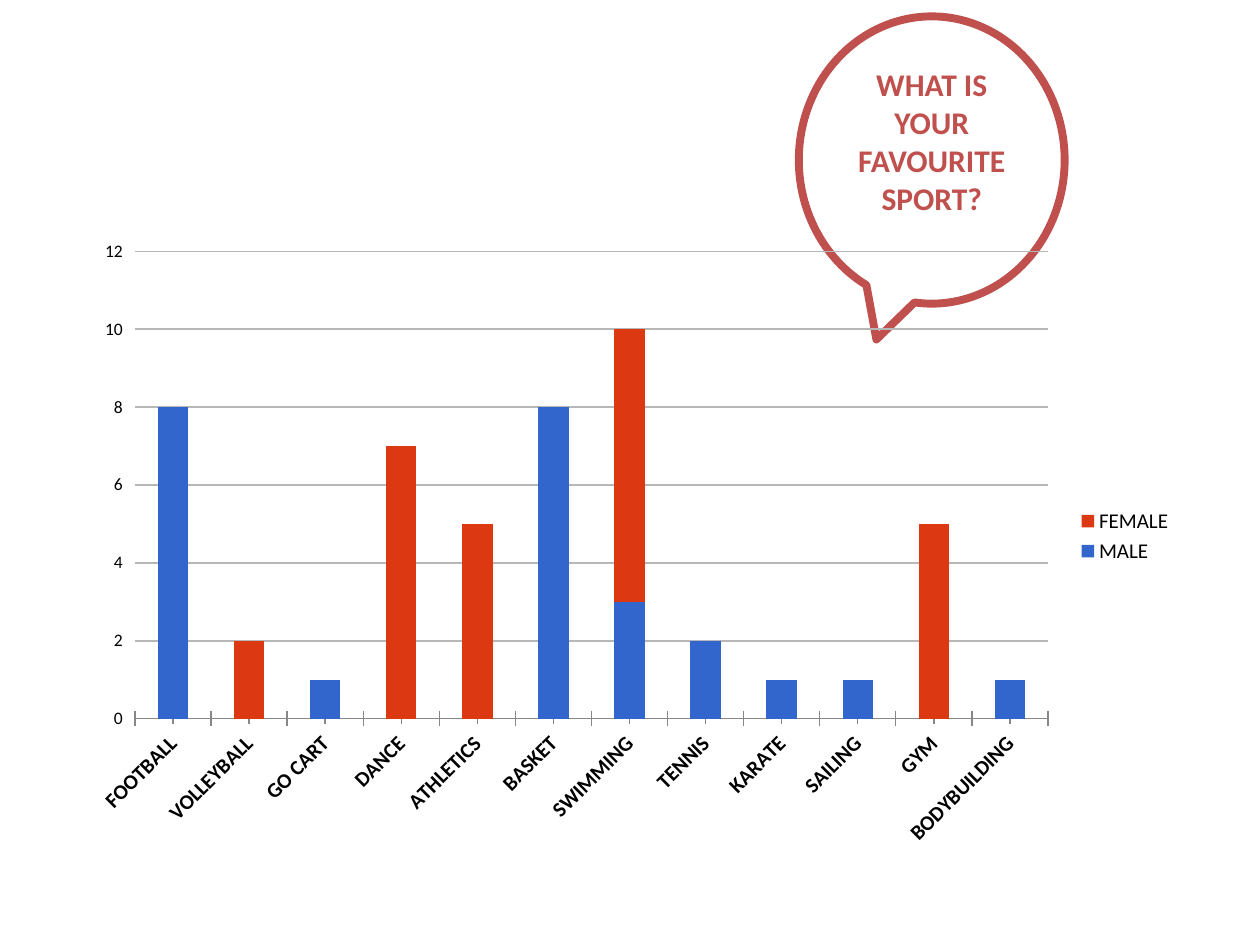
from pptx import Presentation
from pptx.chart.data import CategoryChartData
from pptx.dml.color import RGBColor
from pptx.enum.chart import XL_CHART_TYPE, XL_LEGEND_POSITION, XL_TICK_MARK
from pptx.enum.shapes import MSO_SHAPE
from pptx.enum.text import MSO_ANCHOR, PP_ALIGN
from pptx.oxml import parse_xml
from pptx.oxml.ns import nsdecls, qn
from pptx.util import Inches, Pt

COLORS = {
    "white": "FFFFFF",
    "callout": "C0504D",
    "text": "000000",
    "grid": "B7B7B7",
    "axis": "878787",
    "MALE": "3366CC",
    "FEMALE": "DC3912",
}
FONT = "Calibri"
SPORTS = {
    "FOOTBALL": (8, None),
    "VOLLEYBALL": (None, 2),
    "GO CART": (1, None),
    "DANCE": (None, 7),
    "ATHLETICS": (None, 5),
    "BASKET": (8, None),
    "SWIMMING": (3, 7),
    "TENNIS": (2, None),
    "KARATE": (1, None),
    "SAILING": (1, None),
    "GYM": (None, 5),
    "BODYBUILDING": (1, None),
}


def color(name):
    return RGBColor.from_string(COLORS[name])


def style(font, size, name, bold=False):
    font.name = FONT
    font.size = Pt(size)
    font.bold = bold
    font.color.rgb = color(name)


def add_bubble(slide, left, top, width, height):
    bubble = slide.shapes.add_shape(
        MSO_SHAPE.OVAL_CALLOUT, Inches(left), Inches(top), Inches(width), Inches(height)
    )
    bubble.shadow.inherit = False
    bubble.fill.solid()
    bubble.fill.fore_color.rgb = color("white")
    bubble.line.color.rgb = color("callout")
    bubble.line.width = Pt(4.5)
    frame = bubble.text_frame
    frame.word_wrap = True
    frame.vertical_anchor = MSO_ANCHOR.MIDDLE
    frame.margin_bottom = Inches(0.35)
    para = frame.paragraphs[0]
    para.alignment = PP_ALIGN.CENTER
    run = para.add_run()
    run.text = "WHAT IS YOUR FAVOURITE SPORT?"
    style(run.font, 18, "callout", True)


def set_plot(chart, left, top, width, height):
    area = chart.element.find(".//" + qn("c:plotArea"))
    for old in area.findall(qn("c:layout")):
        area.remove(old)
    sizes = {"x": left, "y": top, "w": width, "h": height}
    parts = "".join(f'<c:{key}Mode val="edge"/>' for key in "xy")
    parts += "".join(f'<c:{key} val="{size}"/>' for key, size in sizes.items())
    area.insert(0, parse_xml(
        f'<c:layout {nsdecls("c")}><c:manualLayout>'
        f'<c:layoutTarget val="inner"/>{parts}</c:manualLayout></c:layout>'
    ))


def add_chart(slide, left, top, width, height):
    data = CategoryChartData()
    data.categories = list(SPORTS)
    for name, values in zip(("MALE", "FEMALE"), zip(*SPORTS.values())):
        data.add_series(name, values)
    chart = slide.shapes.add_chart(
        XL_CHART_TYPE.COLUMN_STACKED,
        Inches(left), Inches(top), Inches(width), Inches(height), data,
    ).chart
    chart.has_title = False
    style(chart.font, 10, "text")
    set_plot(chart, 0.037, 0.045, 0.837, 0.747)

    plot = chart.plots[0]
    plot.vary_by_categories = False
    plot.gap_width = 150
    plot.overlap = 100
    for series in plot.series:
        series.format.fill.solid()
        series.format.fill.fore_color.rgb = color(series.name)

    sports, counts = chart.category_axis, chart.value_axis
    for axis in (sports, counts):
        axis.major_tick_mark = XL_TICK_MARK.CROSS
        axis.minor_tick_mark = XL_TICK_MARK.CROSS
    style(sports.tick_labels.font, 12, "text", True)
    sports.format.line.color.rgb = color("axis")
    body = chart.element.find(".//" + qn("c:catAx")).find(".//" + qn("a:bodyPr"))
    body.set("rot", "-2700000")
    style(counts.tick_labels.font, 10, "text")
    counts.minimum_scale = 0
    counts.maximum_scale = 12
    counts.major_unit = 2
    counts.format.line.fill.background()
    grid = counts.major_gridlines.format.line
    grid.color.rgb = color("grid")
    grid.width = Pt(0.75)

    chart.has_legend = True
    chart.legend.position = XL_LEGEND_POSITION.RIGHT
    chart.legend.include_in_layout = False
    style(chart.legend.font, 12, "text")


def main():
    deck = Presentation()
    deck.slide_width = Inches(10)
    deck.slide_height = Inches(7.5)
    slide = deck.slides.add_slide(deck.slide_layouts[6])
    add_bubble(slide, 6.34, 0.13, 2.11, 2.28)
    add_chart(slide, 0.75, 1.77, 8.66, 4.97)
    deck.save("out.pptx")


if __name__ == "__main__":
    main()
